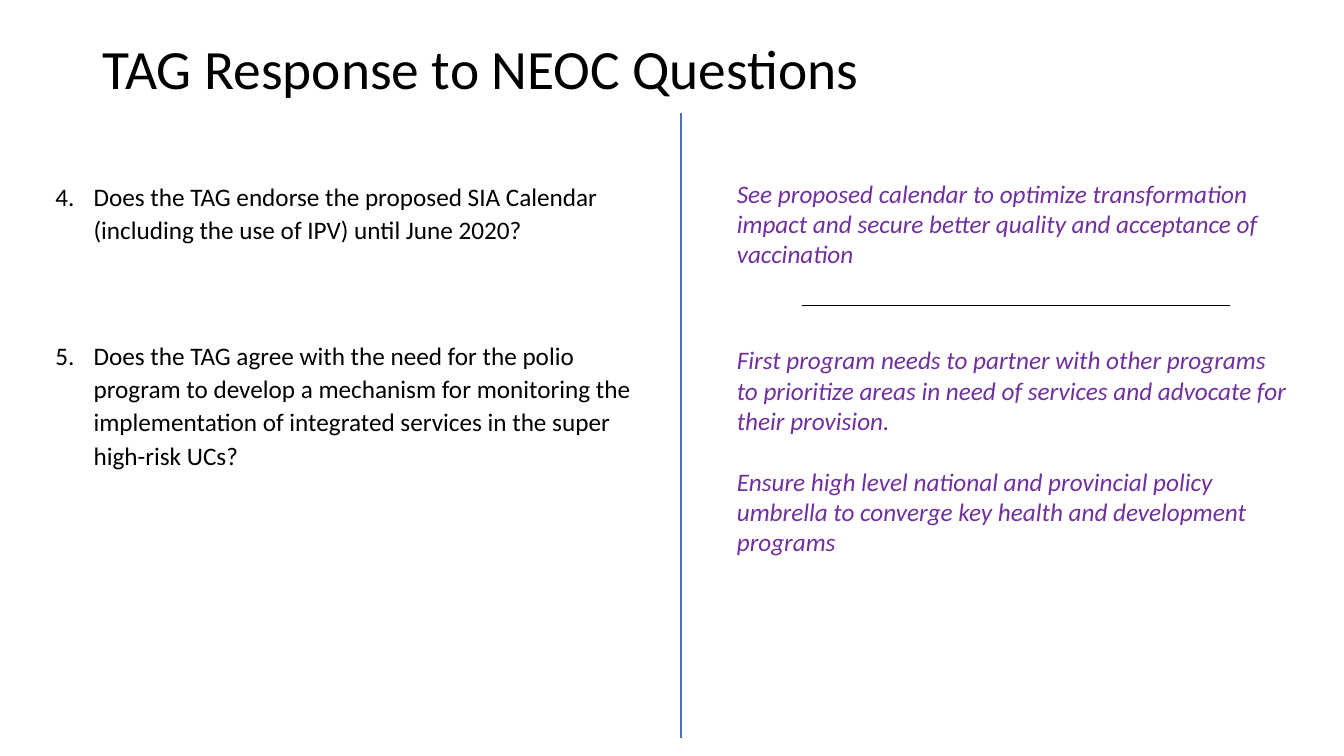
from dataclasses import dataclass

from lxml import etree
from pptx import Presentation
from pptx.dml.color import RGBColor
from pptx.enum.shapes import MSO_CONNECTOR
from pptx.enum.text import MSO_ANCHOR
from pptx.oxml.ns import qn
from pptx.util import Inches, Pt

STRAIGHT = MSO_CONNECTOR.STRAIGHT
TOP, MIDDLE = MSO_ANCHOR.TOP, MSO_ANCHOR.MIDDLE


@dataclass(frozen=True)
class Theme:
    """Colours, font and type sizes of the deck."""
    font: str = "Calibri"
    title_size: float = 39.6
    body_size: float = 18
    ink: str = "000000"
    answer: str = "7030A0"
    divider: str = "4472C4"


THEME = Theme()
TITLE = "TAG Response to NEOC Questions"
FIRST_NUMBER = 4
QUESTIONS = [
    "Does the TAG endorse the proposed SIA Calendar (including the use of IPV) until June 2020?",
    "Does the TAG agree with the need for the polio program to develop a mechanism for "
    "monitoring the implementation of integrated services in the super high-risk UCs?",
]
CALENDAR_ANSWER = [
    "See proposed calendar to optimize transformation impact and secure better quality "
    "and acceptance of vaccination",
]
SERVICES_ANSWER = [
    "First program needs to partner with other programs to prioritize areas in need of "
    "services and advocate for their provision.",
    "Ensure high level national and provincial policy umbrella to converge key health "
    "and development programs",
]


def add_text(page, box, texts, size, color, anchor=TOP, line_spacing=1.0,
             first_gap=0, gap=0, italic=False, number_from=None):
    """Place paragraphs in a box, numbered when number_from is given."""
    frame = page.shapes.add_textbox(*map(Inches, box)).text_frame
    frame.word_wrap = True
    frame.vertical_anchor = anchor
    for index, text in enumerate(texts):
        para = frame.paragraphs[0] if index == 0 else frame.add_paragraph()
        para.text = text
        para.line_spacing = line_spacing
        para.space_before = Pt(gap if index else first_gap)
        if number_from is not None:
            number_paragraph(para, number_from)
        font = para.font
        font.name = THEME.font
        font.size = Pt(size)
        font.italic = italic
        font.color.rgb = RGBColor.from_string(color)


def number_paragraph(para, start):
    """Give a paragraph a hanging automatic number."""
    properties = para._p.get_or_add_pPr()
    indent = Inches(0.38)
    properties.set("marL", str(indent))
    properties.set("indent", str(-indent))
    etree.SubElement(properties, qn("a:buFont"), typeface="+mj-lt")
    etree.SubElement(properties, qn("a:buAutoNum"), type="arabicPeriod", startAt=str(start))


def add_rule(page, start, end, color, width):
    """Draw a straight rule without shadow."""
    rule = page.shapes.add_connector(STRAIGHT, *map(Inches, start + end))
    rule.line.color.rgb = RGBColor.from_string(color)
    rule.line.width = Pt(width)
    etree.SubElement(rule._element.spPr, qn("a:effectLst"))


def add_title(page, box):
    """Place the slide title."""
    add_text(page, box, [TITLE], THEME.title_size, THEME.ink, MIDDLE, 0.9)


def add_questions(page, box):
    """Place the numbered questions."""
    add_text(page, box, QUESTIONS, THEME.body_size, THEME.ink, line_spacing=1.1,
             first_gap=6, gap=66, number_from=FIRST_NUMBER)


def add_answers(page, box):
    """Place both answers with a short rule between them."""
    left, top, width, height = box
    for offset, texts in ((0, CALENDAR_ANSWER), (1.65, SERVICES_ANSWER)):
        add_text(page, (left, top + offset, width, height - offset), texts,
                 THEME.body_size, THEME.answer, gap=22, italic=True)
    rule_left, rule_top = left + 0.74, top + 1.31
    add_rule(page, (rule_left, rule_top), (rule_left + 4.25, rule_top), THEME.ink, 1)


def build_response_slide(deck):
    """Build the slide of questions and answers."""
    page = deck.slides.add_slide(deck.slide_layouts[6])
    add_title(page, (0.92, 0.4, 11.5, 0.62))
    add_questions(page, (0.45, 1.72, 6.13, 3.89))
    add_rule(page, (6.75, 1.12), (6.75, 7.32), THEME.divider, 1.5)
    add_answers(page, (7.21, 1.72, 5.67, 4.17))


def main():
    """Create and save the deck."""
    deck = Presentation()
    deck.slide_width, deck.slide_height = Inches(13.33), Inches(7.5)
    build_response_slide(deck)
    deck.save("out.pptx")


if __name__ == "__main__":
    main()
